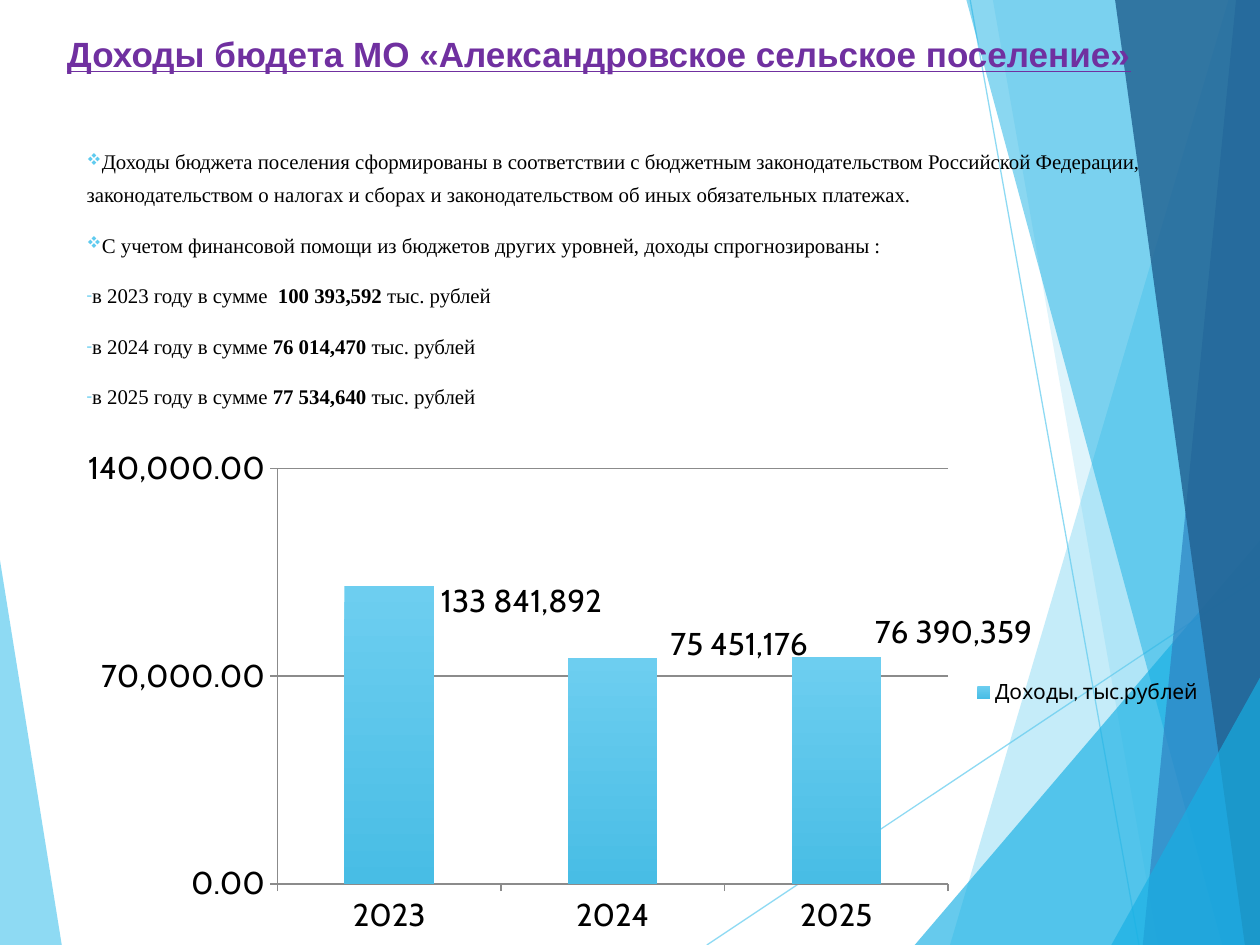
from dataclasses import dataclass
from typing import NamedTuple

from lxml.etree import SubElement
from pptx import Presentation
from pptx.chart.data import CategoryChartData
from pptx.dml.color import RGBColor
from pptx.enum.chart import XL_CHART_TYPE, XL_LEGEND_POSITION, XL_TICK_MARK
from pptx.enum.shapes import MSO_CONNECTOR
from pptx.oxml import parse_xml
from pptx.oxml.ns import nsdecls, qn
from pptx.util import Inches, Pt


@dataclass(frozen=True)
class Theme:
    sky: str = "5FCBEF"
    azure: str = "17B0E4"
    blue: str = "2E83C3"
    navy: str = "226292"
    purple: str = "7030A0"
    ink: str = "000000"
    grid: str = "8B8B8B"
    bar_top: str = "6DCEF0"
    bar_bottom: str = "48BDE5"
    title_size: float = 20
    body_size: float = 11.9
    chart_size: float = 18
    legend_size: float = 12
    title_font: str = "Arial"
    body_font: str = "Times New Roman"
    chart_font: str = "Cabin"


class Facet(NamedTuple):
    points: tuple
    color: str
    alpha: int


class Ray(NamedTuple):
    start: tuple
    end: tuple


class Box(NamedTuple):
    left: float
    top: float
    width: float
    height: float


class Bullet(NamedTuple):
    mark: str
    face: str


class Statement(NamedTuple):
    bullet: Bullet
    lead: str
    amount: str = ""
    unit: str = ""


class Income(NamedTuple):
    year: str
    value: int
    label: str
    shift: tuple


THEME = Theme()
WIDTH, HEIGHT = Inches(10), Inches(7.5)

LEFT_FACET = Facet(((0, 59.3), (4.9, 100), (0, 100)), THEME.sky, 70)
RAYS = (Ray((56.1, 100), (100, 61)), Ray((77, 0), (90.4, 100)))
RIGHT_FACETS = (
    Facet(((97.5, 0), (75.4, 100), (100, 100), (100, 0)), THEME.sky, 36),
    Facet(((78.8, 0), (91.9, 100), (100, 100), (100, 0)), THEME.sky, 20),
    Facet(((72.6, 100), (100, 57.2), (100, 100)), THEME.azure, 66),
    Facet(((76.7, 0), (97, 100), (100, 100), (100, 0)), THEME.azure, 50),
    Facet(((98.1, 0), (90.7, 100), (100, 100), (100, 0)), THEME.blue, 70),
    Facet(((88.5, 0), (98.8, 100), (100, 100), (100, 0)), THEME.navy, 82),
    Facet(((88.2, 100), (100, 71.7), (100, 100)), THEME.azure, 66),
)
CHART_BOX = Box(5.13, 46.47, 91.3, 53.6)
BODY_BOX = Box(5.9, 14.27, 86.6, 30.4)
TITLE_BOX = Box(4.33, 2.8, 90.6, 5.87)

DIAMOND = Bullet("v", "Wingdings")
DASH = Bullet("-", THEME.body_font)
STATEMENTS = (
    Statement(DIAMOND, "Доходы бюджета поселения сформированы в соответствии с бюджетным "
              "законодательством Российской Федерации, законодательством о налогах и "
              "сборах и законодательством об иных обязательных платежах."),
    Statement(DIAMOND, "С учетом финансовой помощи из бюджетов других уровней, "
              "доходы спрогнозированы :"),
    Statement(DASH, "в 2023 году в сумме  ", "100 393,592 ", "тыс. рублей"),
    Statement(DASH, "в 2024 году в сумме ", "76 014,470 ", "тыс. рублей"),
    Statement(DASH, "в 2025 году в сумме ", "77 534,640 ", "тыс. рублей"),
)
INCOMES = (
    Income("2023", 100394, "133 841,892", (11.5, -26.4)),
    Income("2024", 76014, "75 451,176", (11, -25.1)),
    Income("2025", 76390, "76 390,359", (10.2, -27.3)),
)


def place(x: float, y: float) -> tuple:
    return round(WIDTH * x / 100), round(HEIGHT * y / 100)


def frame(box: Box) -> tuple:
    return place(box.left, box.top) + place(box.width, box.height)


def set_alpha(element, percent: int) -> None:
    for color in element.iter(qn("a:srgbClr")):
        SubElement(color, qn("a:alpha"), val=str(percent * 1000))


def style_font(font, size: float, face: str, color: str = THEME.ink) -> None:
    font.size, font.name = Pt(size), face
    font.color.rgb = RGBColor.from_string(color)


def write(paragraph, text: str, *, size: float, face: str, color: str = THEME.ink,
          bold: bool = False, underline: bool = False) -> None:
    run = paragraph.add_run()
    run.text = text
    style_font(run.font, size, face, color)
    run.font.bold, run.font.underline = bold, underline
    if underline:
        run._r.rPr.find(qn("a:latin")).addprevious(parse_xml(
            f'<a:uFill {nsdecls("a")}><a:solidFill><a:srgbClr val="{color}"/>'
            "</a:solidFill></a:uFill>"))


def draw_facet(slide, facet: Facet) -> None:
    first, *others = [place(*point) for point in facet.points]
    builder = slide.shapes.build_freeform(*first)
    builder.add_line_segments(others, close=True)
    shape = builder.convert_to_shape()
    shape.shadow.inherit = False
    shape.fill.solid()
    shape.fill.fore_color.rgb = RGBColor.from_string(facet.color)
    set_alpha(shape.element.spPr, facet.alpha)
    shape.line.fill.background()


def draw_ray(slide, ray: Ray) -> None:
    line = slide.shapes.add_connector(MSO_CONNECTOR.STRAIGHT, *place(*ray.start), *place(*ray.end))
    line.line.width = Pt(0.75)
    line.line.color.rgb = RGBColor.from_string(THEME.sky)
    set_alpha(line.element.spPr, 70)
    SubElement(line.element.spPr, qn("a:effectLst"))


def manual_layout(inner: bool = False, **percents: float):
    modes = '<c:layoutTarget val="inner"/><c:xMode val="edge"/><c:yMode val="edge"/>' if inner else ""
    sizes = "".join(f'<c:{key} val="{value / 100}"/>' for key, value in percents.items())
    return parse_xml(f'<c:layout {nsdecls("c")}><c:manualLayout>{modes}{sizes}'
                     "</c:manualLayout></c:layout>")


def draw_chart(slide) -> None:
    data = CategoryChartData(number_format="#,##0.00")
    data.categories = [income.year for income in INCOMES]
    data.add_series("Доходы, тыс.рублей", [income.value for income in INCOMES])
    chart = slide.shapes.add_chart(XL_CHART_TYPE.COLUMN_STACKED, *frame(CHART_BOX), data).chart
    style_font(chart.font, THEME.chart_size, THEME.chart_font)
    chart.has_title = False
    chart.has_legend = True
    chart.legend.position = XL_LEGEND_POSITION.RIGHT
    chart.legend.include_in_layout = False
    style_font(chart.legend.font, THEME.legend_size, THEME.chart_font)

    amounts = chart.value_axis
    amounts.minimum_scale, amounts.maximum_scale, amounts.major_unit = 0, 140000, 70000
    amounts.has_major_gridlines = True
    amounts.tick_labels.number_format = "#,##0.00"
    amounts.tick_labels.number_format_is_linked = False
    for axis in (amounts, chart.category_axis):
        axis.major_tick_mark = XL_TICK_MARK.OUTSIDE
    for part in (amounts, chart.category_axis, amounts.major_gridlines):
        part.format.line.color.rgb = RGBColor.from_string(THEME.grid)
        part.format.line.width = Pt(1)

    plot = chart.plots[0]
    plot.gap_width, plot.overlap, plot.vary_by_categories = 150, 100, False
    series = plot.series[0]
    fill = series.format.fill
    fill.gradient()
    fill.gradient_angle = 270
    for stop, color in zip(fill.gradient_stops, (THEME.bar_top, THEME.bar_bottom)):
        stop.color.rgb = RGBColor.from_string(color)
    series.data_labels.show_value = True
    for index, income in enumerate(INCOMES):
        caption = series.points[index].data_label.text_frame
        caption.word_wrap = False
        write(caption.paragraphs[0], income.label, size=THEME.chart_size, face=THEME.chart_font)
    for label, income in zip(chart.element.iter(qn("c:dLbl")), INCOMES):
        label.insert(1, manual_layout(x=income.shift[0], y=income.shift[1]))
    for leader in chart.element.iter(qn("c:showLeaderLines")):
        leader.set("val", "0")

    plot_area = chart.element.find(".//" + qn("c:plotArea"))
    for layout in plot_area.findall(qn("c:layout")):
        plot_area.remove(layout)
    plot_area.insert(0, manual_layout(inner=True, x=18.5, y=5.8, w=58.3, h=82))


def add_bullet(paragraph, bullet: Bullet) -> None:
    properties = paragraph._p.get_or_add_pPr()
    properties.set("marL", "0")
    properties.set("indent", "0")
    SubElement(SubElement(properties, qn("a:buClr")), qn("a:srgbClr"), val=THEME.sky)
    SubElement(properties, qn("a:buSzPct"), val="80000")
    SubElement(properties, qn("a:buFont"), typeface=bullet.face)
    SubElement(properties, qn("a:buChar"), char=bullet.mark)


def draw_statements(slide) -> None:
    body = slide.shapes.add_textbox(*frame(BODY_BOX)).text_frame
    body.word_wrap = True
    for index, statement in enumerate(STATEMENTS):
        paragraph = body.add_paragraph() if index else body.paragraphs[0]
        paragraph.line_spacing, paragraph.space_before = 1.32, Pt(10)
        add_bullet(paragraph, statement.bullet)
        for text in filter(None, statement[1:]):
            write(paragraph, text, size=THEME.body_size, face=THEME.body_font,
                  bold=text == statement.amount)


def draw_title(slide) -> None:
    title = slide.shapes.add_textbox(*frame(TITLE_BOX)).text_frame
    title.word_wrap = True
    write(title.paragraphs[0], "Доходы бюдета МО «Александровское сельское поселение»",
          size=THEME.title_size, face=THEME.title_font, color=THEME.purple,
          bold=True, underline=True)


def main() -> None:
    deck = Presentation()
    deck.slide_width, deck.slide_height = WIDTH, HEIGHT
    slide = deck.slides.add_slide(deck.slide_layouts[6])
    for facet in (LEFT_FACET, *RIGHT_FACETS[:0]):
        draw_facet(slide, facet)
    for ray in RAYS:
        draw_ray(slide, ray)
    for facet in RIGHT_FACETS:
        draw_facet(slide, facet)
    draw_chart(slide)
    draw_statements(slide)
    draw_title(slide)
    deck.save("out.pptx")


if __name__ == "__main__":
    main()
